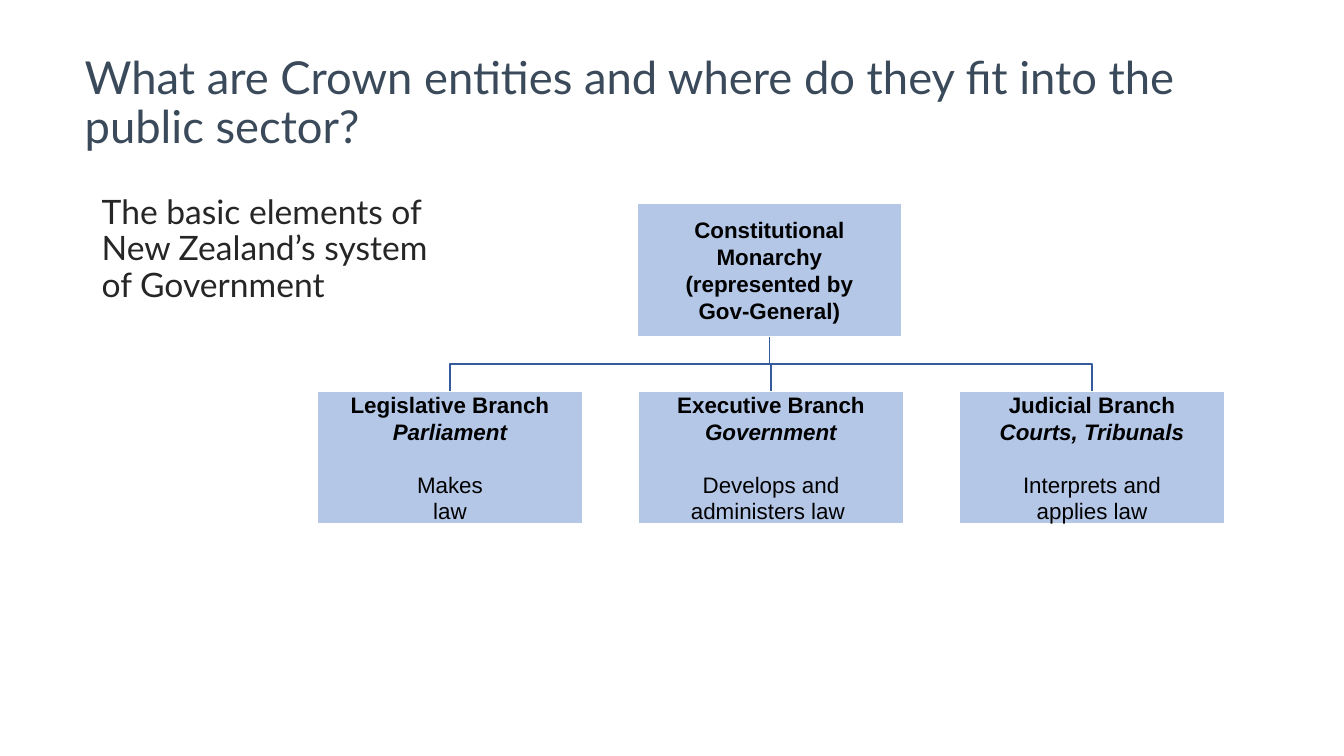
from dataclasses import dataclass

from lxml.etree import SubElement
from pptx import Presentation
from pptx.dml.color import RGBColor
from pptx.enum.shapes import MSO_SHAPE
from pptx.enum.text import MSO_ANCHOR, MSO_AUTO_SIZE, PP_ALIGN
from pptx.oxml.ns import qn
from pptx.util import Cm, Pt

BOX_WIDTH, BOX_HEIGHT = 6.68, 3.35
BRANCH_LEFT, BRANCH_TOP, BRANCH_PITCH = 8.0, 9.86, 8.09
BLANK_LINE = 18.4


@dataclass
class Line:
    text: str
    bold: bool = False
    italic: bool = False
    space_before: float = 0


@dataclass
class Box:
    left: float
    top: float
    lines: list[Line]

    @property
    def centre(self) -> float:
        return self.left + BOX_WIDTH / 2


def colour(hex_value: str) -> RGBColor:
    return RGBColor.from_string(hex_value)


def write(paragraph, text: str, *, size: float, font: str = "Arial", color: str = "000000",
          bold: bool = False, italic: bool = False, align=PP_ALIGN.LEFT,
          line_spacing: float = 1.0, space_before: float = 0) -> None:
    paragraph.alignment = align
    paragraph.line_spacing = line_spacing
    paragraph.space_before = Pt(space_before)
    run = paragraph.add_run()
    run.text = text
    run.font.size = Pt(size)
    run.font.name = font
    run.font.bold = bold
    run.font.italic = italic
    run.font.color.rgb = colour(color)


def fill_placeholder(placeholder, position: tuple, text: str, *, anchor,
                     size: float, color: str) -> None:
    placeholder.left, placeholder.top, placeholder.width, placeholder.height = map(Cm, position)
    frame = placeholder.text_frame
    frame.word_wrap = True
    frame.auto_size = MSO_AUTO_SIZE.NONE
    frame.vertical_anchor = anchor
    paragraph = frame.paragraphs[0]
    write(paragraph, text, size=size, font="Lato", color=color, line_spacing=0.9)
    # Plain text without bullet or indent
    properties = paragraph._p.get_or_add_pPr()
    properties.set("marL", "0")
    properties.set("indent", "0")
    SubElement(properties, qn("a:buNone"))


def draw_link(slide, parent: Box, child: Box) -> None:
    bottom = parent.top + BOX_HEIGHT
    middle = (bottom + child.top) / 2
    points = [(parent.centre, middle), (child.centre, middle), (child.centre, child.top)]
    builder = slide.shapes.build_freeform(Cm(parent.centre), Cm(bottom))
    builder.add_line_segments([(Cm(x), Cm(y)) for x, y in points], close=False)
    link = builder.convert_to_shape()
    link.shadow.inherit = False
    link.fill.background()
    link.line.color.rgb = colour("365B9D")
    link.line.width = Pt(1)


def draw_box(slide, box: Box) -> None:
    shape = slide.shapes.add_shape(MSO_SHAPE.RECTANGLE, Cm(box.left), Cm(box.top),
                                   Cm(BOX_WIDTH), Cm(BOX_HEIGHT))
    shape.shadow.inherit = False
    shape.fill.solid()
    shape.fill.fore_color.rgb = colour("B4C7E7")
    shape.line.color.rgb = colour("FFFFFF")
    shape.line.width = Pt(1)
    frame = shape.text_frame
    frame.word_wrap = True
    frame.vertical_anchor = MSO_ANCHOR.MIDDLE
    frame.margin_left = frame.margin_right = frame.margin_top = frame.margin_bottom = Cm(0.03)
    for index, line in enumerate(box.lines):
        paragraph = frame.add_paragraph() if index else frame.paragraphs[0]
        write(paragraph, line.text, size=16, bold=line.bold, italic=line.italic,
              align=PP_ALIGN.CENTER, space_before=line.space_before)


def branch(column: int, name: str, body: str, role: tuple[str, str]) -> Box:
    return Box(BRANCH_LEFT + column * BRANCH_PITCH, BRANCH_TOP, [
        Line(name, bold=True),
        Line(body, bold=True, italic=True),
        Line(role[0], space_before=BLANK_LINE),
        Line(role[1]),
    ])


def main() -> None:
    presentation = Presentation()
    presentation.slide_width, presentation.slide_height = Cm(33.87), Cm(19.05)
    slide = presentation.slides.add_slide(presentation.slide_layouts[1])

    # Title and introduction
    fill_placeholder(slide.shapes.title, (1.88, 2.44, 29.21, 1.55),
                     "What are Crown entities and where do they fit into the public sector?",
                     anchor=MSO_ANCHOR.BOTTOM, size=32.4, color="3A4A5A")
    fill_placeholder(slide.placeholders[1], (2.31, 4.8, 9.58, 6.22),
                     "The basic elements of New Zealand’s system of Government",
                     anchor=MSO_ANCHOR.TOP, size=24, color="262626")

    # Organisation chart
    monarchy_lines = ["Constitutional", "Monarchy", "(represented by", "Gov-General)"]
    monarchy = Box(16.05, 5.13, [Line(text, bold=True) for text in monarchy_lines])
    branches = [
        branch(0, "Legislative Branch", "Parliament", ("Makes", "law")),
        branch(1, "Executive Branch", "Government", ("Develops and", "administers law ")),
        branch(2, "Judicial Branch", "Courts, Tribunals", ("Interprets and", "applies law")),
    ]
    for child in reversed(branches):
        draw_link(slide, monarchy, child)
    for box in [monarchy, *branches]:
        draw_box(slide, box)

    presentation.save("out.pptx")


if __name__ == "__main__":
    main()
